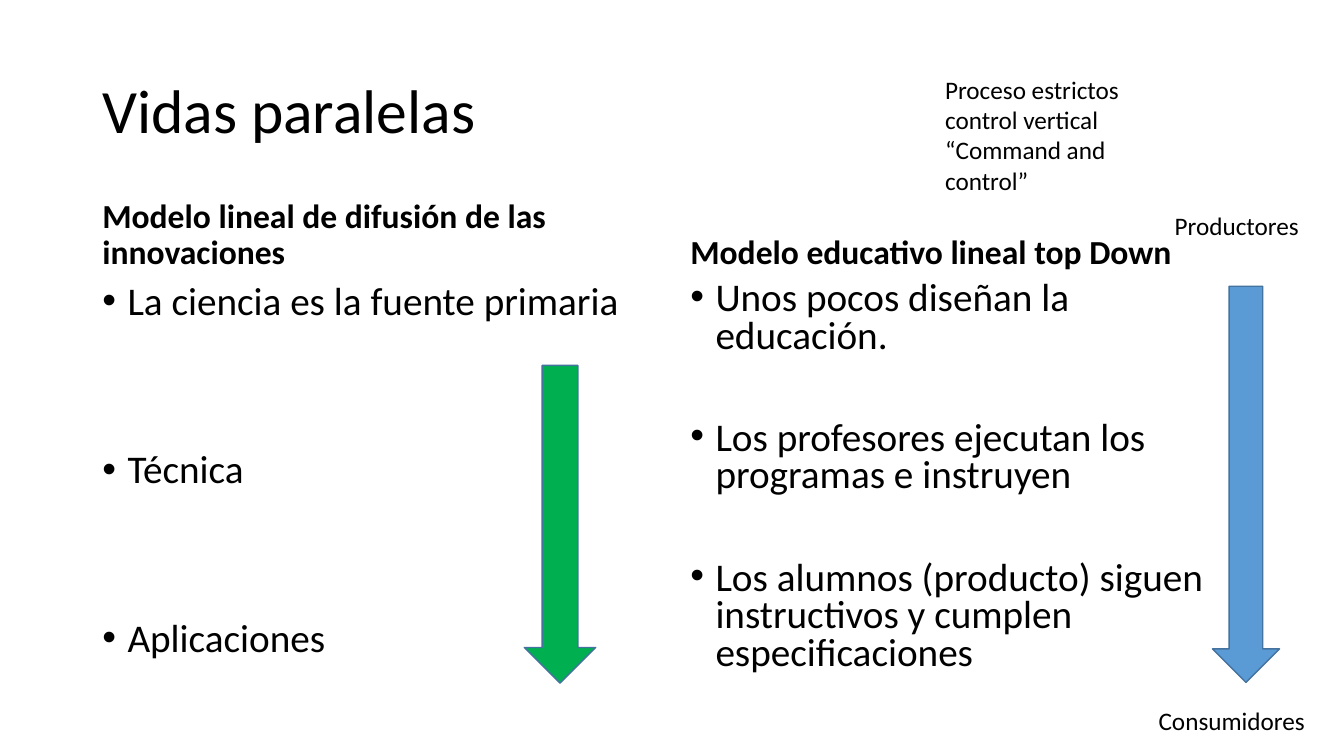
from lxml.etree import SubElement
from pptx import Presentation
from pptx.dml.color import RGBColor
from pptx.enum.shapes import MSO_SHAPE as Shape
from pptx.enum.text import MSO_ANCHOR as Anchor, MSO_AUTO_SIZE as AutoSize
from pptx.oxml.ns import qn
from pptx.util import Pt

BLACK = RGBColor(0x00, 0x00, 0x00)
GREEN = RGBColor(0x00, 0xB0, 0x50)
BLUE = RGBColor(0x5B, 0x9B, 0xD5)
OUTLINE = RGBColor(0x43, 0x73, 0x9E)

FONT = "Calibri"
INDENT = 18
FIRST_GAP = 10
HEADING_HEIGHT = 65


def add_text(slide, box, lines, size, bold=False, anchor=Anchor.TOP,
             auto_size=AutoSize.NONE, **spacing):
    """Write one paragraph per line; spacing holds paragraph attributes."""
    frame = slide.shapes.add_textbox(*map(Pt, box)).text_frame
    for attribute, value in {"word_wrap": True, "auto_size": auto_size,
                             "vertical_anchor": anchor}.items():
        setattr(frame, attribute, value)
    for index, line in enumerate(lines):
        paragraph = frame.paragraphs[0] if index == 0 else frame.add_paragraph()
        for attribute, value in spacing.items():
            setattr(paragraph, attribute, value)
        run = paragraph.add_run()
        run.text = line
        for attribute, value in {"name": FONT, "size": Pt(size), "bold": bold}.items():
            setattr(run.font, attribute, value)
        run.font.color.rgb = BLACK
    return frame


def add_bullets(slide, box, stages, line_spacing, stage_gap):
    frame = add_text(slide, box, stages, 28,
                     line_spacing=line_spacing, space_before=Pt(stage_gap))
    frame.paragraphs[0].space_before = Pt(FIRST_GAP)
    for paragraph in frame.paragraphs:
        properties = paragraph._p.get_or_add_pPr()
        properties.set("marL", str(Pt(INDENT)))
        properties.set("indent", str(-Pt(INDENT)))
        SubElement(properties, qn("a:buFont"), typeface="Arial")
        SubElement(properties, qn("a:buChar"), char="•")


def add_model(slide, box, heading, stages, line_spacing, stage_gap):
    """Place a bold heading with its bulleted stages below."""
    left, top, width, height = box
    add_text(slide, (left, top, width, HEADING_HEIGHT), [heading], 24, bold=True,
             anchor=Anchor.BOTTOM, line_spacing=0.9, space_before=Pt(FIRST_GAP))
    add_bullets(slide, (left, top + HEADING_HEIGHT, width, height - HEADING_HEIGHT),
                stages, line_spacing, stage_gap)


def add_down_arrow(slide, box, color):
    arrow = slide.shapes.add_shape(Shape.DOWN_ARROW, *map(Pt, box))
    arrow.shadow.inherit = False
    arrow.fill.solid()
    arrow.fill.fore_color.rgb = color
    arrow.line.color.rgb = OUTLINE
    arrow.line.width = Pt(1)


def add_label(slide, box, lines):
    add_text(slide, box, lines, 18, auto_size=AutoSize.SHAPE_TO_FIT_TEXT)


def add_control_chain(slide, box):
    """Place the arrow from producers to consumers and the labels around it."""
    left, top, width, height = box
    add_label(slide, (left - 198, top - 155, 164, 94),
              ["Proceso estrictos control vertical", "“Command and control”"])
    add_label(slide, (left - 34, top - 57.5, 104.5, 29), ["Productores"])
    add_down_arrow(slide, box, BLUE)
    add_label(slide, (left - 45.5, top + height + 13, 187, 29), ["Consumidores"])


def build_parallel_lives(slide):
    add_text(slide, (66, 29, 828, 104.5), ["Vidas paralelas"], 44,
             anchor=Anchor.MIDDLE, line_spacing=0.9)
    add_model(slide, (66, 132.5, 406, 355),
              "Modelo lineal de difusión de las innovaciones",
              ["La ciencia es la fuente primaria", "Técnica", "Aplicaciones"],
              line_spacing=0.9, stage_gap=90)
    add_model(slide, (486, 132.5, 408, 355),
              "Modelo educativo lineal top Down",
              ["Unos pocos diseñan la educación.",
               "Los profesores ejecutan los programas e instruyen",
               "Los alumnos (producto) siguen instructivos y cumplen especificaciones"],
              line_spacing=0.8, stage_gap=46)
    add_down_arrow(slide, (374.5, 261, 51, 227), GREEN)
    add_control_chain(slide, (866, 204.5, 48, 283))


def main():
    presentation = Presentation()
    presentation.slide_width = Pt(960)
    presentation.slide_height = Pt(540)
    blank_layout = presentation.slide_layouts[6]
    build_parallel_lives(presentation.slides.add_slide(blank_layout))
    presentation.save("out.pptx")


if __name__ == "__main__":
    main()
